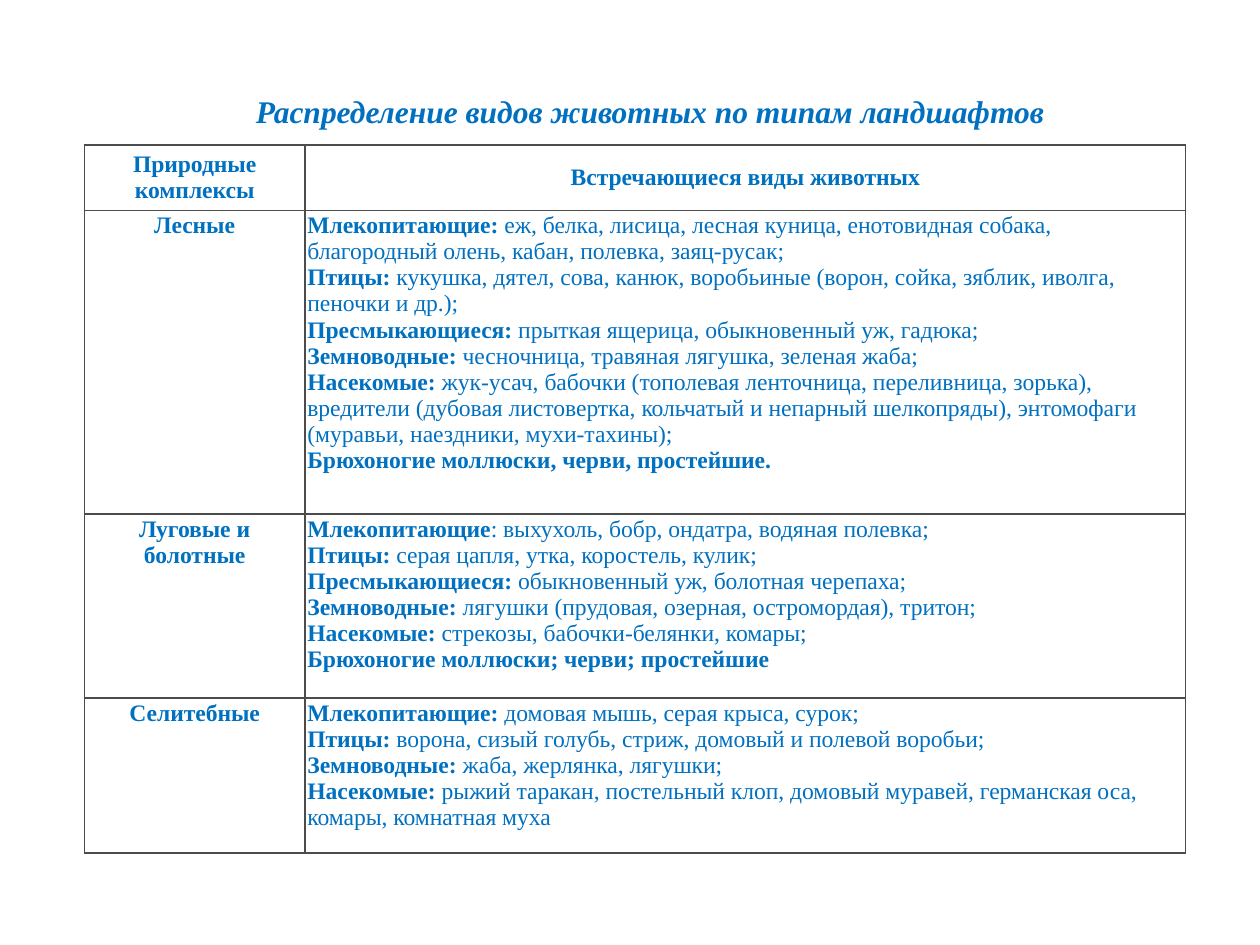
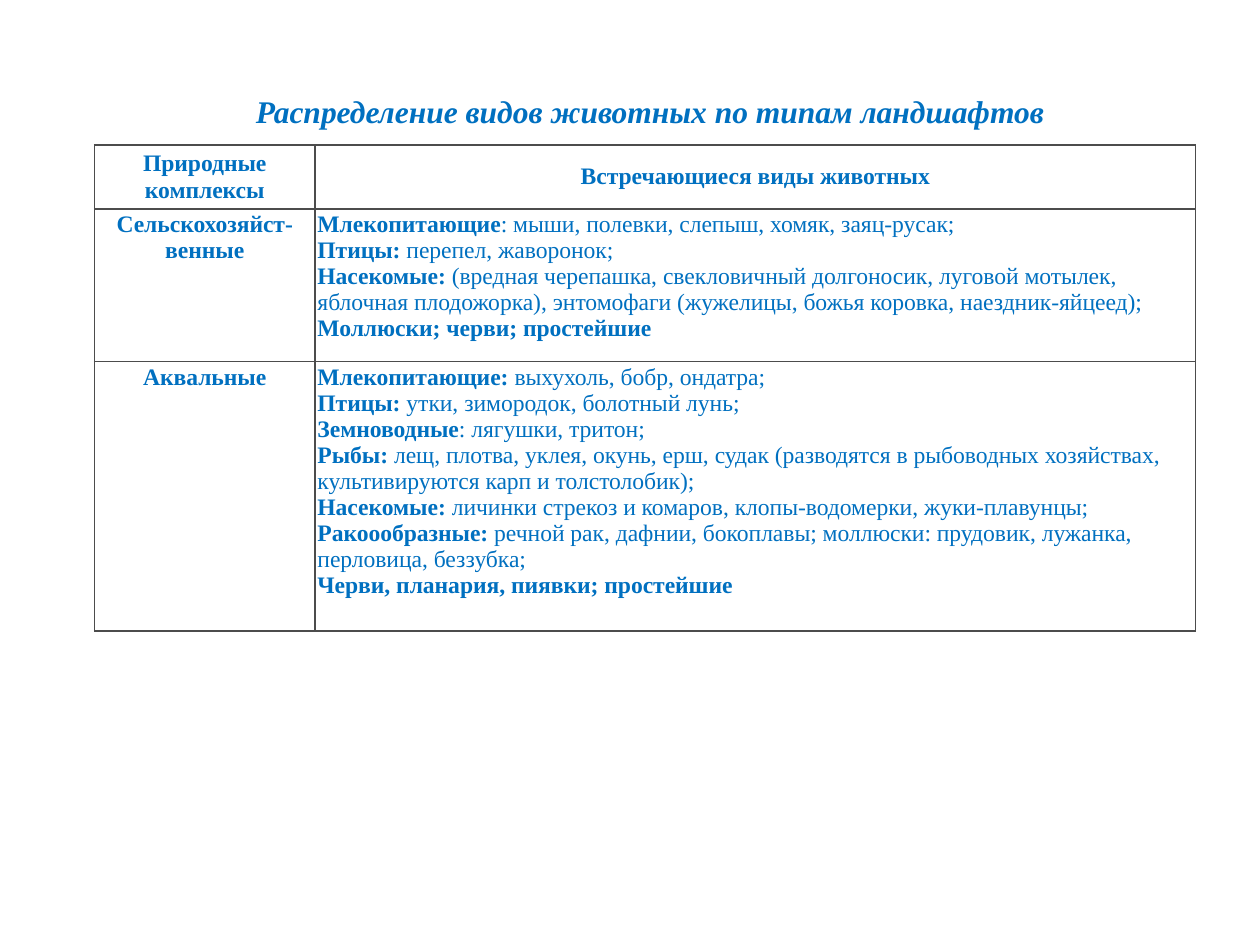
from pptx import Presentation
from pptx.dml.color import RGBColor
from pptx.enum.text import MSO_ANCHOR, PP_ALIGN
from pptx.oxml import parse_xml
from pptx.oxml.ns import nsdecls
from pptx.util import Inches, Pt

BLUE = RGBColor(0x00, 0x70, 0xC0)
BORDER = RGBColor(0x4C, 0x4C, 0x4C)
FONT = "Times New Roman"
TITLE = "Распределение видов животных по типам ландшафтов"
HEADERS = ("Природные комплексы", "Встречающиеся виды животных")
COLUMN_WIDTHS = (1.75, 6.99)
TABLE_TOP = 1.15
CELL_MARGIN = 0.02
HEADER_SIZE, TITLE_SIZE = 13.5, 18

FIRST_HABITATS = [
    ("Лесные", [
        ("Млекопитающие:", " еж, белка, лисица, лесная куница, енотовидная собака, "
                           "благородный олень, кабан, полевка, заяц-русак;"),
        ("Птицы:", " кукушка, дятел, сова, канюк, воробьиные (ворон, сойка, зяблик, "
                   "иволга, пеночки и др.);"),
        ("Пресмыкающиеся:", " прыткая ящерица, обыкновенный уж, гадюка;"),
        ("Земноводные:", " чесночница, травяная лягушка, зеленая жаба;"),
        ("Насекомые:", " жук-усач, бабочки (тополевая ленточница, переливница, зорька), "
                       "вредители (дубовая листовертка, кольчатый и непарный шелкопряды), "
                       "энтомофаги (муравьи, наездники, мухи-тахины);"),
        ("Брюхоногие моллюски, черви, простейшие.", ""),
    ]),
    ("Луговые и болотные", [
        ("Млекопитающие", ": выхухоль, бобр, ондатра, водяная полевка;"),
        ("Птицы:", " серая цапля, утка, коростель, кулик;"),
        ("Пресмыкающиеся:", " обыкновенный уж, болотная черепаха;"),
        ("Земноводные:", " лягушки (прудовая, озерная, остромордая), тритон;"),
        ("Насекомые:", " стрекозы, бабочки-белянки, комары;"),
        ("Брюхоногие моллюски; черви; простейшие", ""),
    ]),
    ("Селитебные", [
        ("Млекопитающие:", " домовая мышь, серая крыса, сурок;"),
        ("Птицы:", " ворона, сизый голубь, стриж, домовый и полевой воробьи;"),
        ("Земноводные:", " жаба, жерлянка, лягушки;"),
        ("Насекомые:", " рыжий таракан, постельный клоп, домовый муравей, "
                       "германская оса, комары, комнатная муха"),
    ]),
]

SECOND_HABITATS = [
    ("Сельскохозяйст-венные", [
        ("Млекопитающие", ": мыши, полевки, слепыш, хомяк, заяц-русак;"),
        ("Птицы:", " перепел, жаворонок;"),
        ("Насекомые:", " (вредная черепашка, свекловичный долгоносик, луговой мотылек, "
                       "яблочная плодожорка), энтомофаги (жужелицы, божья коровка, "
                       "наездник-яйцеед);"),
        ("Моллюски; черви; простейшие", ""),
    ]),
    ("Аквальные", [
        ("Млекопитающие:", " выхухоль, бобр, ондатра;"),
        ("Птицы:", " утки, зимородок, болотный лунь;"),
        ("Земноводные", ": лягушки, тритон;"),
        ("Рыбы:", " лещ, плотва, уклея, окунь, ерш, судак (разводятся в рыбоводных "
                  "хозяйствах, культивируются карп и толстолобик);"),
        ("Насекомые:", " личинки стрекоз и комаров, клопы-водомерки, жуки-плавунцы;"),
        ("Ракоообразные:", " речной рак, дафнии, бокоплавы; моллюски: прудовик, лужанка, "
                           "перловица, беззубка;"),
        ("Черви, планария, пиявки; простейшие", ""),
    ]),
]


def add_run(p, text, size=HEADER_SIZE, bold=True, italic=False):
    r = p.add_run()
    r.text = text
    r.font.name = FONT
    r.font.size = Pt(size)
    r.font.bold = bold
    r.font.italic = italic
    r.font.color.rgb = BLUE


def add_title(s, left, top, width, height):
    sp = s.shapes.title
    sp.left, sp.top = Inches(left), Inches(top)
    sp.width, sp.height = Inches(width), Inches(height)
    tf = sp.text_frame
    tf.word_wrap = True
    tf.vertical_anchor = MSO_ANCHOR.TOP
    p = tf.paragraphs[0]
    p.alignment = PP_ALIGN.LEFT
    add_run(p, TITLE, TITLE_SIZE, italic=True)


def format_cell(cell, anchor):
    cell.margin_left = cell.margin_right = Inches(CELL_MARGIN)
    cell.margin_top = cell.margin_bottom = Inches(CELL_MARGIN)
    cell.vertical_anchor = anchor
    tcPr = cell._tc.get_or_add_tcPr()
    for side in ("lnL", "lnR", "lnT", "lnB"):
        tcPr.append(parse_xml(
            f'<a:{side} {nsdecls("a")} w="{Pt(1)}"><a:solidFill>'
            f'<a:srgbClr val="{BORDER}"/></a:solidFill></a:{side}>'))
    cell.fill.background()


def fill_label(cell, text, anchor=MSO_ANCHOR.TOP):
    format_cell(cell, anchor)
    p = cell.text_frame.paragraphs[0]
    p.alignment = PP_ALIGN.CENTER
    add_run(p, text)


def fill_animals(cell, groups):
    format_cell(cell, MSO_ANCHOR.TOP)
    tf = cell.text_frame
    for i, (group, animals) in enumerate(groups):
        p = tf.add_paragraph() if i else tf.paragraphs[0]
        add_run(p, group)
        if animals:
            add_run(p, animals, bold=False)


def add_habitat_table(s, left, top, row_heights, habitats):
    frame = s.shapes.add_table(
        len(row_heights), len(COLUMN_WIDTHS), Inches(left), Inches(top),
        Inches(sum(COLUMN_WIDTHS)), Inches(sum(row_heights)))
    table = frame.table
    table.first_row = table.horz_banding = False
    for column, width in zip(table.columns, COLUMN_WIDTHS):
        column.width = Inches(width)
    for row, height in zip(table.rows, row_heights):
        row.height = Inches(height)
    for i, header in enumerate(HEADERS):
        fill_label(table.cell(0, i), header, MSO_ANCHOR.MIDDLE)
    for i, (habitat, groups) in enumerate(habitats, 1):
        fill_label(table.cell(i, 0), habitat)
        fill_animals(table.cell(i, 1), groups)


def add_habitat_slide(prs, table_left, row_heights, habitats):
    s = prs.slides.add_slide(prs.slide_layouts[5])
    add_title(s, 1.93, 0.68, 7.15, 0.4)
    add_habitat_table(s, table_left, TABLE_TOP, row_heights, habitats)


def main():
    prs = Presentation()
    prs.slide_width, prs.slide_height = Inches(10), Inches(7.5)
    add_habitat_slide(prs, 0.67, (0.52, 2.41, 1.46, 1.23), FIRST_HABITATS)
    add_habitat_slide(prs, 0.75, (0.51, 1.21, 2.14), SECOND_HABITATS)
    prs.save("out.pptx")


if __name__ == "__main__":
    main()
